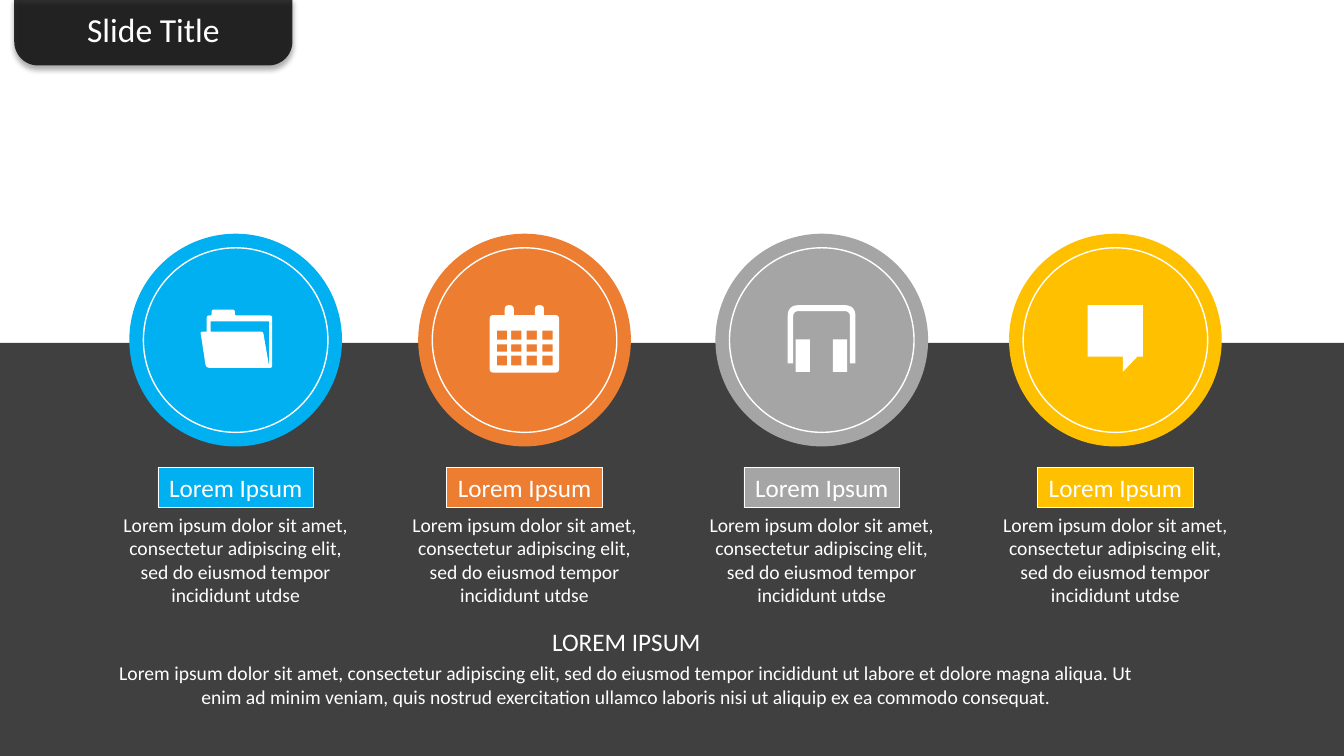
from dataclasses import dataclass
from itertools import product
from math import asin, cos, pi, sin

from lxml import etree
from pptx import Presentation
from pptx.dml.color import RGBColor
from pptx.enum.shapes import MSO_SHAPE
from pptx.enum.text import MSO_ANCHOR, MSO_AUTO_SIZE, PP_ALIGN
from pptx.oxml.ns import qn
from pptx.util import Cm, Pt

OVAL, RECTANGLE = MSO_SHAPE.OVAL, MSO_SHAPE.RECTANGLE
TAB = MSO_SHAPE.ROUND_2_SAME_RECTANGLE
CENTER, TOP, GROW = PP_ALIGN.CENTER, MSO_ANCHOR.TOP, MSO_AUTO_SIZE.SHAPE_TO_FIT_TEXT


@dataclass(frozen=True)
class Theme:
    font: str = "Calibri"
    white: str = "FFFFFF"
    black: str = "000000"
    blue: str = "00B0F0"
    orange: str = "ED7D31"
    gray: str = "A5A5A5"
    yellow: str = "FFC000"
    title: int = 24
    heading: int = 18
    body: int = 14


THEME = Theme()
PAGE_WIDTH, PAGE_HEIGHT = 33.87, 19.05
CIRCLE_Y, CIRCLE_SIZE, RING_SIZE = 8.57, 5.36, 4.65
BAND_TOP, NOTCH_RADIUS = 8.64, 2.65
UNITS_PER_CM = 1000

LABEL = "Lorem Ipsum"
DETAIL = ("Lorem ipsum dolor sit amet, consectetur adipiscing elit, "
          "sed do eiusmod tempor incididunt utdse")
SUMMARY = ("Lorem ipsum dolor sit amet, consectetur adipiscing elit, sed do eiusmod "
           "tempor incididunt ut labore et dolore magna aliqua. Ut enim ad minim veniam, "
           "quis nostrud exercitation ullamco laboris nisi ut aliquip ex ea commodo consequat.")


def block(left, top, right, bottom):
    return [(left, top), (right, top), (right, bottom), (left, bottom)]


# Icons: offset from the circle centre, then outlines of (x, y, corner radius) in cm
FOLDER = (-0.91, -0.77), [
    [(0.02, 0.56, 0.05), (0.18, 0.56), (0.18, 0.15, 0.06), (0.3, 0.15, 0.03),
     (0.3, 0, 0.07), (0.89, 0, 0.07), (0.89, 0.15, 0.04), (1.83, 0.15, 0.06),
     (1.83, 1.47, 0.06), (0.16, 1.47, 0.1)],
    [(0.28, 0.3), (1.75, 0.3), (1.75, 1.42), (1.6, 0.56, 0.05), (0.28, 0.56)],
]
CALENDAR = (-0.88, -0.88), [
    [(0, 0.25, 0.1), (0.38, 0.25), (0.38, 0, 0.11), (0.61, 0, 0.11), (0.61, 0.25),
     (1.14, 0.25), (1.14, 0, 0.11), (1.37, 0, 0.11), (1.37, 0.25), (1.75, 0.25, 0.1),
     (1.75, 1.7, 0.1), (0, 1.7, 0.1)],
] + [block(day, week, day + 0.26, week + height)
     for (week, height), day in product([(0.64, 0.23), (0.99, 0.18), (1.27, 0.25)],
                                        [0.18, 0.54, 0.93, 1.33])]
HEADPHONES = (-0.86, -0.88), [
    [(0, 1.47), (0, 0, 0.28), (1.71, 0, 0.28), (1.71, 1.47),
     (1.57, 1.47), (1.57, 0.15, 0.14), (0.14, 0.15, 0.14), (0.14, 1.47)],
    block(0.2, 0.86, 0.56, 1.68),
    block(1.14, 0.86, 1.5, 1.68),
]
SPEECH = (-0.7, -0.88), [
    [(0, 0), (1.39, 0), (1.39, 1.3), (1.25, 1.3), (0.89, 1.68), (0.89, 1.3), (0, 1.3)],
]
COLUMNS = [
    (5.94, THEME.blue, FOLDER),
    (13.22, THEME.orange, CALENDAR),
    (20.71, THEME.gray, HEADPHONES),
    (28.11, THEME.yellow, SPEECH),
]


def paint(shape, fill=None, line=None, weight=1, opacity=100):
    shape.shadow.inherit = False
    if fill:
        shape.fill.solid()
        shape.fill.fore_color.rgb = RGBColor.from_string(fill)
    else:
        shape.fill.background()
    if line:
        shape.line.color.rgb = RGBColor.from_string(line)
        shape.line.width = Pt(weight)
    else:
        shape.line.fill.background()
    if opacity < 100:
        color = shape.element.spPr.find(qn("a:solidFill"))[0]
        etree.SubElement(color, qn("a:alpha"), val=str(opacity * 1000))


def add_preset(page, kind, left, top, width, height, **look):
    shape = page.shapes.add_shape(kind, Cm(left), Cm(top), Cm(width), Cm(height))
    paint(shape, **look)
    return shape


def add_circle(page, center, size, **look):
    add_preset(page, OVAL, center - size / 2, CIRCLE_Y - size / 2, size, size, **look)


def round_corners(corners, steps=6):
    """Replace each corner that has a radius by a short curve."""
    points = []
    for index, (x, y, *radius) in enumerate(corners):
        if not radius:
            points.append((x, y))
            continue
        ends = []
        for other in (corners[index - 1], corners[(index + 1) % len(corners)]):
            dx, dy = other[0] - x, other[1] - y
            share = radius[0] / (dx * dx + dy * dy) ** 0.5
            ends.append((x + dx * share, y + dy * share))
        (x1, y1), (x2, y2) = ends
        for t in (step / steps for step in range(steps + 1)):
            a, b, c = (1 - t) ** 2, 2 * t * (1 - t), t * t
            points.append((a * x1 + b * x + c * x2, a * y1 + b * y + c * y2))
    return points


def add_outline(page, contours, left=0, top=0, **look):
    scaled = [[(round(x * UNITS_PER_CM), round(y * UNITS_PER_CM)) for x, y in contour]
              for contour in contours]
    builder = page.shapes.build_freeform(*scaled[0][0], scale=Cm(1) / UNITS_PER_CM)
    for index, (start, *rest) in enumerate(scaled):
        if index:
            builder.move_to(*start)
        builder.add_line_segments(rest, close=True)
    paint(builder.convert_to_shape(Cm(left), Cm(top)), **look)


def add_text(frame, text, size=THEME.body, color=THEME.white, before=0):
    para = frame.paragraphs[0]
    if para.runs:
        para = frame.add_paragraph()
        para.space_before = Pt(before)
    para.alignment = CENTER
    span = para.add_run()
    span.text = text
    span.font.name, span.font.size = THEME.font, Pt(size)
    span.font.color.rgb = RGBColor.from_string(color)


def add_box(page, left, top, width, height):
    box = page.shapes.add_textbox(Cm(left), Cm(top), Cm(width), Cm(height))
    box.text_frame.word_wrap = True
    box.text_frame.auto_size = GROW
    return box.text_frame


def add_band(page):
    start = asin((BAND_TOP - CIRCLE_Y) / NOTCH_RADIUS)
    angles = [pi - start - (pi - 2 * start) * step / 40 for step in range(41)]
    notches = [(center + NOTCH_RADIUS * cos(angle), CIRCLE_Y + NOTCH_RADIUS * sin(angle))
               for center, *_ in COLUMNS for angle in angles]
    band = [(0, BAND_TOP), *notches, (PAGE_WIDTH, BAND_TOP),
            (PAGE_WIDTH, PAGE_HEIGHT), (0, PAGE_HEIGHT)]
    add_outline(page, [band], fill=THEME.black, opacity=75)


def add_column(page, center, color, icon):
    add_circle(page, center, CIRCLE_SIZE, fill=color)
    add_circle(page, center, RING_SIZE, line=THEME.white)
    (dx, dy), contours = icon
    add_outline(page, [round_corners(contour) for contour in contours],
                center + dx, CIRCLE_Y + dy, fill=THEME.white)
    label = add_preset(page, RECTANGLE, center - 1.96, 11.77, 3.92, 1.02,
                       fill=color, line=THEME.white, weight=0.5).text_frame
    label.word_wrap = False
    label.auto_size = GROW
    add_text(label, LABEL, size=THEME.heading)
    detail = add_box(page, center - 3.1, 12.83, 6.2, 2.57)
    detail.margin_left = detail.margin_right = Cm(0.17)
    detail.margin_top = detail.margin_bottom = Cm(0.09)
    add_text(detail, DETAIL)


def add_title(page, text):
    tab = add_preset(page, TAB, 0.36, -0.05, 7.01, 1.7, fill=THEME.black, opacity=80)
    tab.adjustments[0], tab.adjustments[1] = 0, 0.352
    effects = tab.element.spPr.find(qn("a:effectLst"))
    shadow = etree.SubElement(effects, qn("a:outerShdw"), blurRad=str(int(Pt(4))),
                              dist=str(int(Pt(3))), dir="5400000", algn="t", rotWithShape="0")
    color = etree.SubElement(shadow, qn("a:srgbClr"), val=THEME.black)
    etree.SubElement(color, qn("a:alpha"), val="40000")
    # The title lies on top of its tab
    title = page.shapes.title
    tab.element.addnext(title.element)
    title.left, title.top, title.width, title.height = Cm(0.36), Cm(0.1), Cm(7.01), Cm(1.27)
    title.text_frame.vertical_anchor = TOP
    title.text_frame.auto_size = GROW
    add_text(title.text_frame, text, size=THEME.title)


def main():
    deck = Presentation()
    deck.slide_width, deck.slide_height = Cm(PAGE_WIDTH), Cm(PAGE_HEIGHT)
    page = deck.slides.add_slide(deck.slide_layouts[5])
    add_band(page)
    for center, color, icon in COLUMNS:
        add_column(page, center, color, icon)
    add_title(page, "Slide Title")
    # Closing summary
    summary = add_box(page, 2.74, 15.67, 26.09, 2.44)
    add_text(summary, "LOREM IPSUM", size=THEME.heading)
    add_text(summary, SUMMARY, before=2.8)
    deck.save("out.pptx")


if __name__ == "__main__":
    main()
